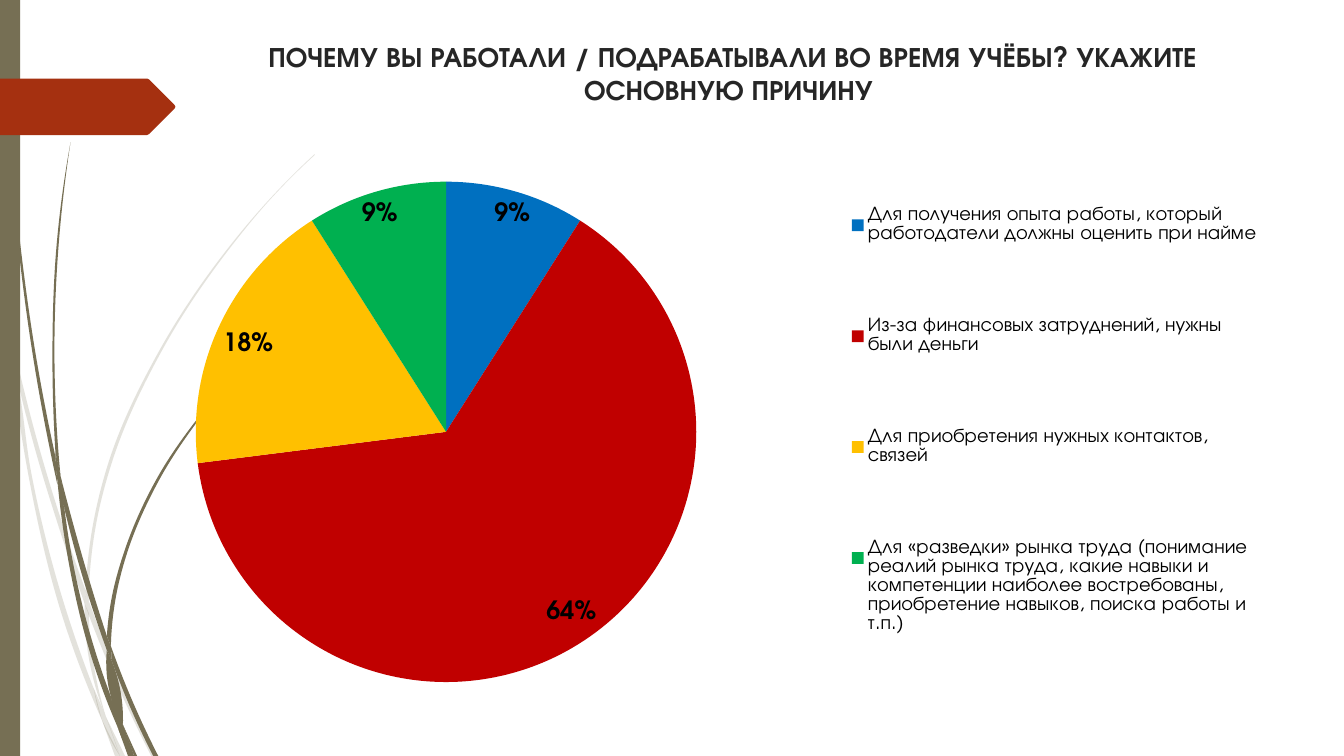
import math
from dataclasses import dataclass

import lxml.etree
import pptx
import pptx.chart.data
import pptx.dml.color
import pptx.enum.chart
import pptx.enum.shapes
import pptx.enum.text
import pptx.oxml.ns
import pptx.shapes.autoshape
import pptx.slide
import pptx.text.text
import pptx.util

Inches = pptx.util.Inches
RGBColor = pptx.dml.color.RGBColor
qn = pptx.oxml.ns.qn
Point = tuple[float, float]
Edge = tuple[Point, ...]

FONT = "TeX Gyre Adventor"
OLIVE = RGBColor(0x76, 0x6F, 0x54)
RUST = RGBColor(0xA5, 0x30, 0x10)
DARK = RGBColor(0x26, 0x26, 0x26)
BLACK = RGBColor(0, 0, 0)
BLUE = RGBColor(0x00, 0x70, 0xC0)
RED = RGBColor(0xC0, 0x00, 0x00)
AMBER = RGBColor(0xFF, 0xC0, 0x00)
GREEN = RGBColor(0x00, 0xB0, 0x50)
PALE_OPACITY = 20
CHART_WIDTH = 11.82
LEGEND_LEFT = 7.72
LEGEND_WIDTH = 4.06


@dataclass(frozen=True)
class Blade:
    outward: Edge
    back: Edge


@dataclass(frozen=True)
class Reason:
    text: str
    percent: int
    color: RGBColor


PALE_BLADES = (
    Blade(((0, 2.82), (0.09, 3.22), (0.11, 3.5)), ((0.11, 3.5), (0, 2.99))),
    Blade(((0.14, 3.45), (0.36, 4.34), (0.62, 5.2), (0.85, 5.86)),
          ((0.84, 5.99), (0.58, 5.22), (0.36, 4.5), (0.17, 3.76))),
    Blade(((0.88, 5.96), (1.27, 6.92), (1.55, 7.5)), ((1.5, 7.5), (1.23, 6.94), (0.88, 6.1))),
    Blade(((1.05, 7.11), (1.24, 7.5)), ((1.19, 7.5), (1.05, 7.11))),
    Blade(((0.11, 3.5), (0.28, 4.7), (0.65, 6.21), (1.01, 7.14)),
          ((0.93, 6.83), (0.7, 6.19), (0.31, 4.69), (0.17, 3.76), (0.11, 3.5))),
    Blade(((0.84, 5.99), (0.87, 6.46), (1.05, 7.11)), ((1.05, 7.11), (0.91, 6.46), (0.88, 6.08))),
    Blade(((0.88, 5.96), (0.95, 5.22), (1.1, 4.62), (1.6, 3.49), (2.29, 2.45), (2.68, 1.98), (3.12, 1.54)),
          ((3.12, 1.53), (2.68, 1.97), (2.28, 2.44), (1.58, 3.48), (1.07, 4.61), (0.92, 5.22), (0.85, 5.86))),
    Blade(((1.01, 7.14), (1.14, 7.5)), ((1.19, 7.5), (1.01, 7.14))),
    Blade(((0.85, 5.86), (0.84, 5.99)), ((0.88, 6.1), (0.88, 5.96))),
    Blade(((0.93, 6.83), (1.01, 7.14), (1.19, 7.5)), ((1.19, 7.5), (1.05, 7.11), (0.93, 6.83))),
)
OLIVE_BLADES = (
    Blade(((0.03, 0), (0.07, 1.1), (0.17, 2.33), (0.33, 3.55), (0.57, 4.81)),
          ((0.55, 4.53), (0.36, 3.55), (0.19, 2.32), (0.08, 1.09), (0.03, 0))),
    Blade(((0.6, 4.72), (0.93, 5.9), (1.06, 6.31)), ((1.06, 6.45), (0.88, 5.92), (0.64, 5.05))),
    Blade(((1.1, 6.41), (1.36, 7.06), (1.57, 7.5)), ((1.52, 7.5), (1.32, 7.08), (1.11, 6.56))),
    Blade(((0.57, 4.77), (0.68, 5.57), (0.93, 6.59), (1.17, 7.22)),
          ((1.1, 6.91), (0.98, 6.57), (0.72, 5.56), (0.64, 5.05))),
    Blade(((0.6, 4.72), (0.54, 3.49), (0.58, 2.45), (0.7, 1.41)),
          ((0.7, 1.41), (0.56, 2.45), (0.52, 3.49), (0.55, 4.49))),
    Blade(((1.22, 7.19), (1.36, 7.5)), ((1.33, 7.5), (1.22, 7.19))),
    Blade(((0.55, 4.49), (0.57, 4.77), (0.64, 5.05)), ((0.64, 5.05), (0.6, 4.72), (0.55, 4.49))),
    Blade(((1.1, 6.41), (1.15, 5.92), (1.25, 5.52), (1.58, 4.76), (2.05, 4.06), (2.31, 3.74), (2.61, 3.44)),
          ((2.6, 3.44), (2.31, 3.73), (2.04, 4.05), (1.56, 4.74), (1.22, 5.51), (1.11, 5.92), (1.06, 6.31))),
    Blade(((1.17, 7.22), (1.27, 7.5)), ((1.31, 7.5), (1.17, 7.22))),
    Blade(((1.06, 6.45), (1.1, 6.91), (1.22, 7.19)), ((1.22, 7.19), (1.11, 6.56), (1.06, 6.45))),
    Blade(((1.06, 6.31), (1.06, 6.45)), ((1.11, 6.56), (1.1, 6.41))),
    Blade(((1.1, 6.91), (1.17, 7.22), (1.3, 7.5)), ((1.33, 7.5), (1.22, 7.19), (1.1, 6.91))),
)
ARROW: Edge = ((0, 0.78), (1.46, 0.78), (1.48, 0.79), (1.73, 1.04), (1.74, 1.06),
               (1.73, 1.08), (1.48, 1.33), (1.46, 1.34), (0, 1.34))
REASONS = (
    Reason("Для получения опыта работы, который работодатели должны оценить при найме", 9, BLUE),
    Reason("Из-за финансовых затруднений, нужны были деньги", 64, RED),
    Reason("Для приобретения нужных контактов, связей", 18, AMBER),
    Reason("Для «разведки» рынка труда (понимание реалий рынка труда, какие навыки и компетенции "
           "наиболее востребованы, приобретение навыков, поиска работы и т.п.)", 9, GREEN),
)


def edge_handles(edge: Edge) -> list[tuple[Point, Point]]:
    lengths = [math.dist(a, b) for a, b in zip(edge, edge[1:])]
    slopes = [((b[0] - a[0]) / d, (b[1] - a[1]) / d) for a, b, d in zip(edge, edge[1:], lengths)]
    inner = [tuple((u * e + v * d) / (d + e) for u, v in zip(before, after))
             for before, after, d, e in zip(slopes, slopes[1:], lengths, lengths[1:])]
    if not inner:
        inner = [slopes[0]]
    first = tuple(2 * s - t for s, t in zip(slopes[0], inner[0]))
    last = tuple(2 * s - t for s, t in zip(slopes[-1], inner[-1]))
    tangents = [first, *inner, last] if len(edge) > 2 else [first, last]
    return [(tuple(p + t * d / 3 for p, t in zip(a, start)), tuple(p - t * d / 3 for p, t in zip(b, end)))
            for a, b, d, start, end in zip(edge, edge[1:], lengths, tangents, tangents[1:])]


def paint(shape: pptx.shapes.autoshape.Shape, color: RGBColor, opacity: int = 100) -> None:
    shape.shadow.inherit = False
    shape.line.fill.background()
    shape.fill.solid()
    shape.fill.fore_color.rgb = color
    if opacity < 100:
        tint = shape._element.spPr.find(f"{qn('a:solidFill')}/{qn('a:srgbClr')}")
        lxml.etree.SubElement(tint, qn("a:alpha"), val=str(opacity * 1000))


def draw_outline(slide: pptx.slide.Slide, points: Edge, color: RGBColor,
                 opacity: int = 100) -> pptx.shapes.autoshape.Shape:
    corners = [(Inches(x), Inches(y)) for x, y in points]
    builder = slide.shapes.build_freeform(*corners[0])
    builder.add_line_segments(corners[1:], close=True)
    shape = builder.convert_to_shape()
    paint(shape, color, opacity)
    return shape


def draw_blade(slide: pptx.slide.Slide, blade: Blade, opacity: int = 100) -> None:
    shape = draw_outline(slide, blade.outward + blade.back, OLIVE, opacity)
    handles = edge_handles(blade.outward) + [None] + edge_handles(blade.back)
    for line, pair in zip(list(shape._element.iter(qn("a:lnTo"))), handles):
        if pair:
            line.tag = qn("a:cubicBezTo")
            for index, (x, y) in enumerate(pair):
                handle = lxml.etree.Element(qn("a:pt"), x=str(Inches(x) - shape.left), y=str(Inches(y) - shape.top))
                line.insert(index, handle)


def format_font(font: pptx.text.text.Font, *, size: int, color: RGBColor, bold: bool = False) -> None:
    font.name = FONT
    font.size = pptx.util.Pt(size)
    font.bold = bold
    font.color.rgb = color


def write_text(shape: pptx.shapes.autoshape.Shape, text: str, *, size: int, color: RGBColor, bold: bool) -> None:
    frame = shape.text_frame
    frame.word_wrap = True
    frame.auto_size = pptx.enum.text.MSO_AUTO_SIZE.NONE
    frame.vertical_anchor = pptx.enum.text.MSO_ANCHOR.TOP
    paragraph = frame.paragraphs[0]
    paragraph.alignment = pptx.enum.text.PP_ALIGN.CENTER
    run = paragraph.add_run()
    run.text = text
    format_font(run.font, size=size, color=color, bold=bold)


def place_part(part: lxml.etree.ElementBase, position: int, **settings: str | float) -> None:
    for layout in part.findall(qn("c:layout")):
        part.remove(layout)
    layout = lxml.etree.Element(qn("c:layout"))
    part.insert(position, layout)
    manual = lxml.etree.SubElement(layout, qn("c:manualLayout"))
    for name, value in settings.items():
        lxml.etree.SubElement(manual, qn("c:" + name), val=str(value))


def draw_chart(slide: pptx.slide.Slide) -> None:
    data = pptx.chart.data.CategoryChartData()
    data.categories = [reason.text for reason in REASONS]
    data.add_series("Series 1", [reason.percent for reason in REASONS])
    chart = slide.shapes.add_chart(pptx.enum.chart.XL_CHART_TYPE.PIE, Inches(0.76), Inches(1.32),
                                   Inches(CHART_WIDTH), Inches(5.93), data).chart
    chart.has_title = False
    format_font(chart.font, size=18, color=BLACK)
    plot = chart.plots[0]
    plot.vary_by_categories = True
    for index, reason in enumerate(REASONS):
        fill = plot.series[0].points[index].format.fill
        fill.solid()
        fill.fore_color.rgb = reason.color
    plot.has_data_labels = True
    labels = plot.data_labels
    labels.show_percentage = True
    labels.show_value = False
    labels.number_format = "0%"
    labels.number_format_is_linked = False
    labels.position = pptx.enum.chart.XL_LABEL_POSITION.BEST_FIT
    format_font(labels.font, size=18, color=BLACK, bold=True)
    chart.has_legend = True
    chart.legend.position = pptx.enum.chart.XL_LEGEND_POSITION.RIGHT
    chart.legend.include_in_layout = False
    format_font(chart.legend.font, size=14, color=BLACK)
    place_part(chart.legend._element, 1, xMode="edge", yMode="edge", x=LEGEND_LEFT / CHART_WIDTH, y=0,
               w=LEGEND_WIDTH / CHART_WIDTH, h=0.96)
    place_part(chart._chartSpace.chart.plotArea, 0, layoutTarget="inner", xMode="edge", yMode="edge",
               x=0.1, y=0.08, w=0.42, h=0.84)


def main() -> None:
    presentation = pptx.Presentation()
    presentation.slide_width = Inches(13.33)
    presentation.slide_height = Inches(7.5)
    slide = presentation.slides.add_slide(presentation.slide_layouts[5])
    for blade in PALE_BLADES:
        draw_blade(slide, blade, PALE_OPACITY)
    for blade in OLIVE_BLADES:
        draw_blade(slide, blade)
    paint(slide.shapes.add_shape(pptx.enum.shapes.MSO_SHAPE.RECTANGLE, 0, 0, Inches(0.2), Inches(7.5)), OLIVE)
    draw_outline(slide, ARROW, RUST)
    title = slide.shapes.title
    title.left, title.top, title.width, title.height = map(Inches, (1.93, 0.34, 10.67, 0.95))
    write_text(title, "ПОЧЕМУ ВЫ РАБОТАЛИ / ПОДРАБАТЫВАЛИ ВО ВРЕМЯ УЧЁБЫ? УКАЖИТЕ ОСНОВНУЮ ПРИЧИНУ ",
               size=20, color=DARK, bold=True)
    draw_chart(slide)
    presentation.save("out.pptx")


if __name__ == "__main__":
    main()
